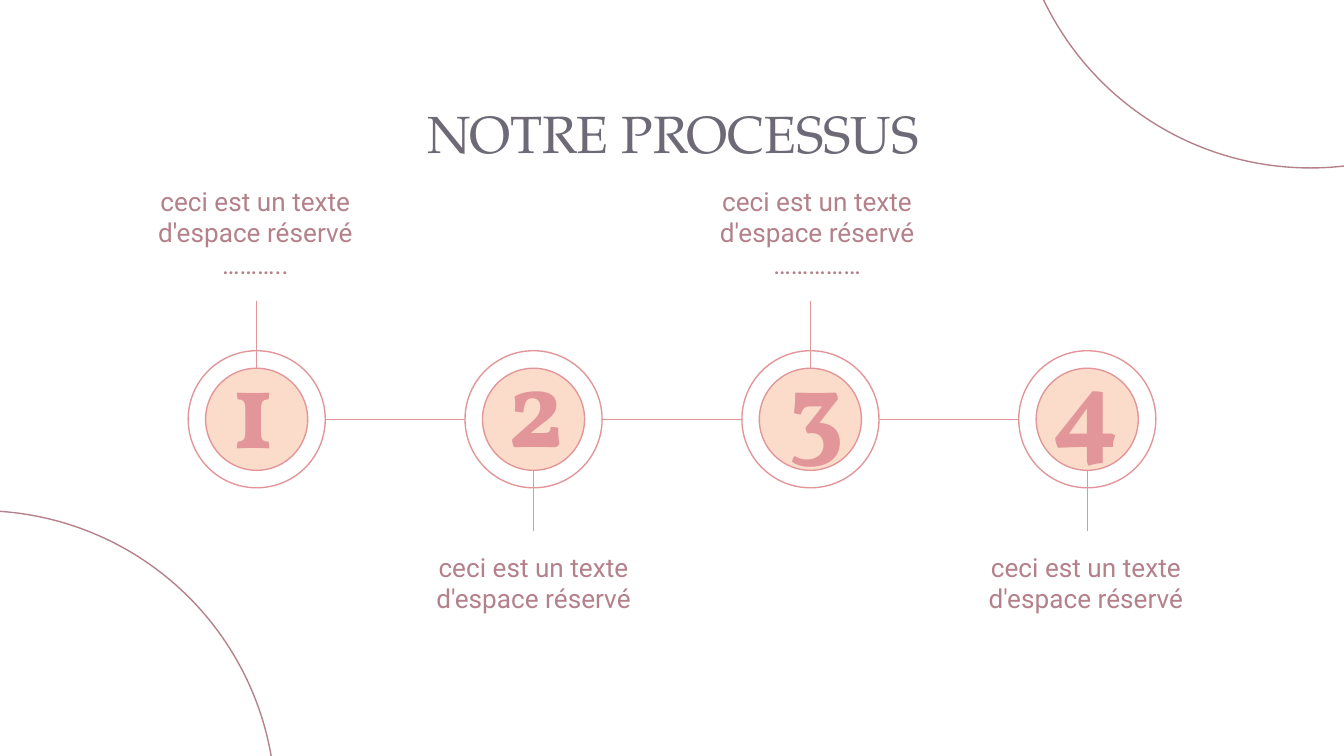
from lxml import etree
from pptx import Presentation
from pptx.dml.color import RGBColor
from pptx.enum.shapes import MSO_CONNECTOR, MSO_SHAPE
from pptx.enum.text import MSO_ANCHOR, PP_ALIGN
from pptx.oxml.ns import qn
from pptx.util import Inches, Pt

ARC, OVAL = MSO_SHAPE.ARC, MSO_SHAPE.OVAL
STRAIGHT = MSO_CONNECTOR.STRAIGHT
TOP, CENTER = MSO_ANCHOR.TOP, PP_ALIGN.CENTER
rgb = RGBColor.from_string

PINK, MAUVE, GREY, PEACH = "E29699", "B4818B", "6E6976", "FACAB1"
FIRST_X, STEP, MID_Y = 1.91, 2.06, 3.12
RING_R, DISC_R = 0.51, 0.38

prs = Presentation()
prs.slide_width = Inches(10)
prs.slide_height = Inches(10) * 9 // 16
s = prs.slides.add_slide(prs.slide_layouts[6])


def add_text(box, text, font, size, color, bold=False, inset=0.1):
    tf = s.shapes.add_textbox(*[Inches(v) for v in box]).text_frame
    tf.word_wrap = True
    tf.vertical_anchor = TOP
    tf.margin_left = tf.margin_right = Inches(inset)
    tf.margin_top = tf.margin_bottom = Inches(inset)
    p = tf.paragraphs[0]
    p.alignment = CENTER
    r = p.add_run()
    r.text = text
    r.font.name, r.font.size, r.font.bold = font, Pt(size), bold
    r.font.color.rgb = rgb(color)


def add_round(kind, x, y, radius, color):
    """Add an unfilled circle or arc centred on x, y."""
    sp = s.shapes.add_shape(kind, Inches(x - radius), Inches(y - radius),
                            Inches(2 * radius), Inches(2 * radius))
    sp.shadow.inherit = False
    sp.fill.background()
    sp.line.color.rgb = rgb(color)
    sp.line.width = Pt(0.75)
    return sp


# Corner arcs: centre, start and end angle in degrees
for x, y, start, end in [(-0.15, 6, 222.3, 42.3), (9.75, -0.95, 34.2, 214.2)]:
    arc = add_round(ARC, x, y, 2.2, MAUVE)
    # Angles are stored in 1/60000 degree, adjustments in 1/100000
    arc.adjustments[0] = start * 0.6
    arc.adjustments[1] = end * 0.6

add_text((0.79, 0.75, 8.44, 0.6), "NOTRE PROCESSUS", "TeX Gyre Pagella", 28,
         GREY, inset=0)

# Steps: trailing dots, caption centre, digit centre and top
steps = [(" ………..", 1.9, 1.89, 2.42), ("", 3.97, 3.99, 2.41),
         (" ……………", 6.08, 6.08, 2.42), ("", 8.08, 8.08, 2.41)]
lines = []
for i, (dots, caption_x, digit_x, digit_y) in enumerate(steps):
    x = FIRST_X + i * STEP
    above = i % 2 == 0

    add_round(OVAL, x, MID_Y, RING_R, PINK)
    disc = add_round(OVAL, x, MID_Y, DISC_R, PINK)
    disc.fill.solid()
    disc.fill.fore_color.rgb = rgb(PEACH)
    color = disc.fill._xPr.find(qn("a:solidFill"))[0]
    etree.SubElement(color, qn("a:alpha"), val="67000")

    if above:
        lines.append((x, MID_Y - DISC_R, x, 2.24))
    else:
        lines.append((x, MID_Y + DISC_R, x, 3.95))
    if i < len(steps) - 1:
        lines.append((x + RING_R, MID_Y, x + STEP - RING_R, MID_Y))

    add_text((caption_x - 1.01, 1.28 if above else 4, 2.02, 0.72),
             "ceci est un texte d'espace réservé" + dots, "Roboto", 14, MAUVE)
    add_text((digit_x - 0.62, digit_y, 1.24, 0.48), str(i + 1), "Vollkorn", 59,
             PINK, bold=True)

for ends in lines:
    line = s.shapes.add_connector(STRAIGHT, *[Inches(v) for v in ends])
    line.line.color.rgb = rgb(PINK)
    line.line.width = Pt(0.75)
    etree.SubElement(line._element.spPr, qn("a:effectLst"))

prs.save("out.pptx")
